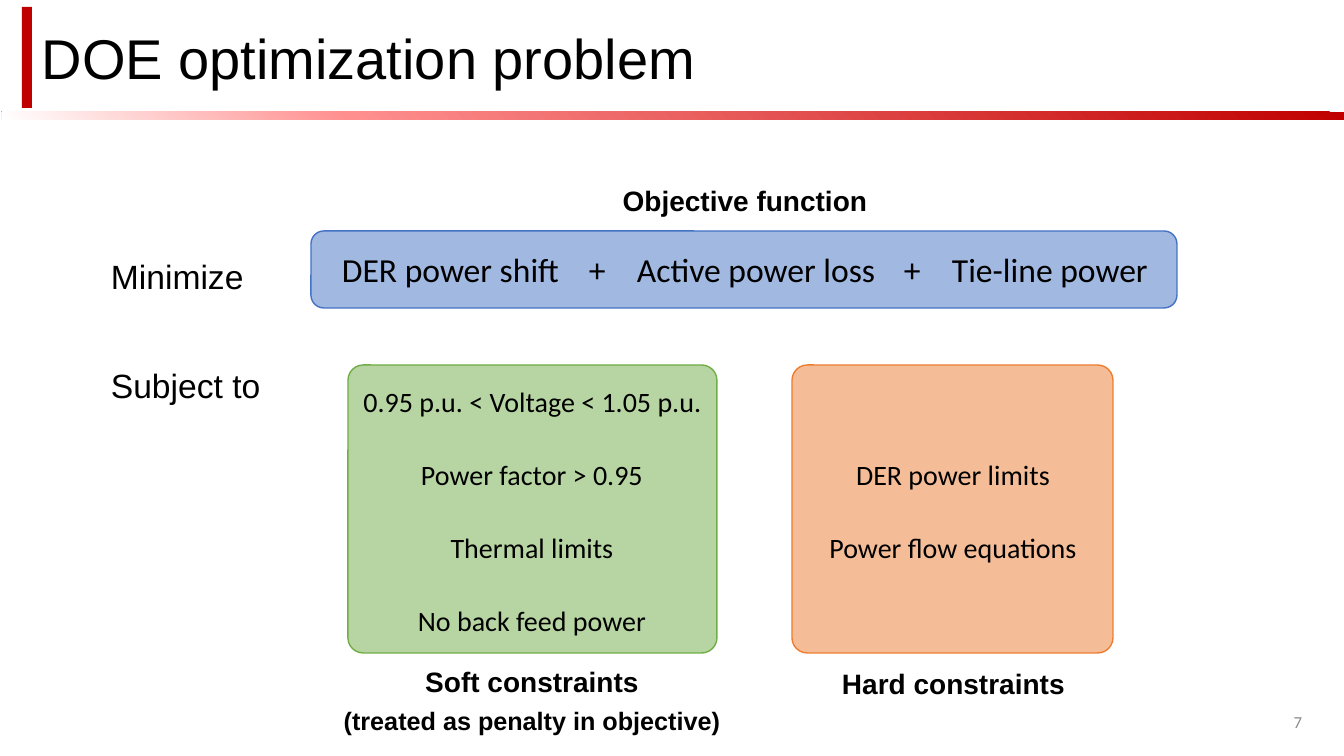
from dataclasses import dataclass

from pptx import Presentation
from pptx.dml.color import RGBColor
from pptx.enum.shapes import MSO_SHAPE
from pptx.enum.text import MSO_ANCHOR, PP_ALIGN
from pptx.oxml import parse_xml
from pptx.oxml.ns import nsdecls, qn
from pptx.util import Emu, Pt

PX = 914400 / 100.8
BLACK = RGBColor(0x00, 0x00, 0x00)
GRAY = RGBColor(0x8C, 0x8C, 0x8C)
RED = RGBColor(0xC0, 0x00, 0x00)
PINK = RGBColor(0xFF, 0x8F, 0x8F)
WHITE = RGBColor(0xFF, 0xFF, 0xFF)
BLUE = RGBColor(0x44, 0x72, 0xC4)
ORANGE = RGBColor(0xED, 0x7D, 0x31)
GREEN = RGBColor(0x70, 0xAD, 0x47)

ROW_TOP, ROW_STEP, ROW_HEIGHT = 380, 73, 44


@dataclass
class Box:
    left: int
    top: int
    width: int
    height: int

    def emu(self) -> list[Emu]:
        return [px(n) for n in (self.left, self.top, self.width, self.height)]


@dataclass
class Line:
    text: str
    size: int
    bold: bool = False


@dataclass
class Label:
    box: Box
    lines: list[Line]
    font: str = "Arial"
    align: PP_ALIGN = PP_ALIGN.LEFT
    spacing: float = 1.0
    color: RGBColor = BLACK
    anchor: MSO_ANCHOR = MSO_ANCHOR.TOP
    tabs: tuple[int, ...] = ()


@dataclass
class Panel:
    box: Box
    color: RGBColor
    radius: float


@dataclass
class Constraint:
    text: str
    center: int
    row: int
    width: int


PANELS = [
    Panel(Box(311, 231, 866, 77), BLUE, 0.167),
    Panel(Box(792, 365, 321, 288), ORANGE, 0.053),
    Panel(Box(348, 365, 369, 288), GREEN, 0.053),
]

LABELS = [
    Label(Box(32, 7, 1157, 101), [Line("DOE optimization problem", 40)],
          anchor=MSO_ANCHOR.MIDDLE),
    Label(Box(1010, 702, 302, 40), [Line("7", 12)], "Calibri", PP_ALIGN.RIGHT,
          color=GRAY, anchor=MSO_ANCHOR.MIDDLE),
    Label(Box(607, 170, 276, 48), [Line("Objective function", 20, True)],
          align=PP_ALIGN.CENTER, spacing=1.25),
    Label(Box(101, 241, 154, 56), [Line("Minimize", 24)], spacing=1.25),
    Label(Box(101, 350, 171, 56), [Line("Subject to", 24)], spacing=1.25),
    Label(Box(332, 244, 827, 50),
          [Line("DER power shift\t+\tActive power loss\t+\tTie-line power", 24)],
          "Calibri", tabs=(247, 295, 562, 610)),
    Label(Box(332, 651, 400, 87),
          [Line("Soft constraints", 20, True),
           Line("(treated as penalty in objective)", 18, True)],
          align=PP_ALIGN.CENTER, spacing=1.25),
    Label(Box(831, 653, 245, 48), [Line("Hard constraints", 20, True)],
          align=PP_ALIGN.CENTER, spacing=1.25),
]

CONSTRAINTS = [
    Constraint("0.95 p.u. < Voltage < 1.05 p.u.", 532, 0, 361),
    Constraint("Power factor > 0.95", 532, 1, 244),
    Constraint("Thermal limits", 532, 2, 186),
    Constraint("No back feed power", 532, 3, 250),
    Constraint("DER power limits", 953, 1, 216),
    Constraint("Power flow equations", 953, 2, 270),
]


def px(n: int) -> Emu:
    return Emu(round(n * PX))


def add_bar(slide, box: Box):
    s = slide.shapes.add_shape(MSO_SHAPE.RECTANGLE, *box.emu())
    s.shadow.inherit = False
    s.line.fill.background()
    s.fill.solid()
    s.fill.fore_color.rgb = RED
    return s


def fade(shape) -> None:
    """Replace the solid fill by a radial gradient from the lower left corner."""
    stops = "".join(
        f'<a:gs pos="{pos * 1000}"><a:srgbClr val="{color}"/></a:gs>'
        for pos, color in ((0, WHITE), (26, PINK), (100, RED)))
    solid = shape.fill._xPr.find(qn("a:solidFill"))
    solid.getparent().replace(solid, parse_xml(
        f'<a:gradFill {nsdecls("a")}><a:gsLst>{stops}</a:gsLst>'
        '<a:path path="circle">'
        '<a:fillToRect l="0" t="100000" r="100000" b="0"/>'
        '</a:path></a:gradFill>'))


def add_panel(slide, panel: Panel) -> None:
    s = slide.shapes.add_shape(MSO_SHAPE.ROUNDED_RECTANGLE, *panel.box.emu())
    s.shadow.inherit = False
    s.adjustments[0] = panel.radius
    s.fill.solid()
    s.fill.fore_color.rgb = panel.color
    color = s.fill._xPr.find(qn("a:solidFill"))[0]
    color.append(parse_xml(f'<a:alpha {nsdecls("a")} val="50000"/>'))
    s.line.color.rgb = panel.color
    s.line.width = Pt(1)


def add_label(slide, label: Label) -> None:
    tf = slide.shapes.add_textbox(*label.box.emu()).text_frame
    tf.word_wrap = True
    tf.vertical_anchor = label.anchor
    for i, line in enumerate(label.lines):
        p = tf.add_paragraph() if i else tf.paragraphs[0]
        p.alignment = label.align
        p.line_spacing = label.spacing
        if label.tabs:
            stops = "".join(f'<a:tab pos="{px(n)}" algn="l"/>' for n in label.tabs)
            p._p.get_or_add_pPr().append(
                parse_xml(f'<a:tabLst {nsdecls("a")}>{stops}</a:tabLst>'))
        r = p.add_run()
        r.text = line.text
        r.font.name = label.font
        r.font.size = Pt(line.size)
        r.font.bold = line.bold
        r.font.color.rgb = label.color


def add_constraint(slide, item: Constraint) -> None:
    box = Box(item.center - item.width // 2, ROW_TOP + item.row * ROW_STEP,
              item.width, ROW_HEIGHT)
    add_label(slide, Label(box, [Line(item.text, 20)], "Calibri", PP_ALIGN.CENTER))


def main() -> None:
    prs = Presentation()
    prs.slide_width, prs.slide_height = px(1344), px(756)
    slide = prs.slides.add_slide(prs.slide_layouts[6])
    fade(add_bar(slide, Box(2, 112, 1342, 8)))
    add_bar(slide, Box(22, 7, 10, 101))
    for panel in PANELS:
        add_panel(slide, panel)
    for label in LABELS:
        add_label(slide, label)
    for item in CONSTRAINTS:
        add_constraint(slide, item)
    prs.save("out.pptx")


if __name__ == "__main__":
    main()
